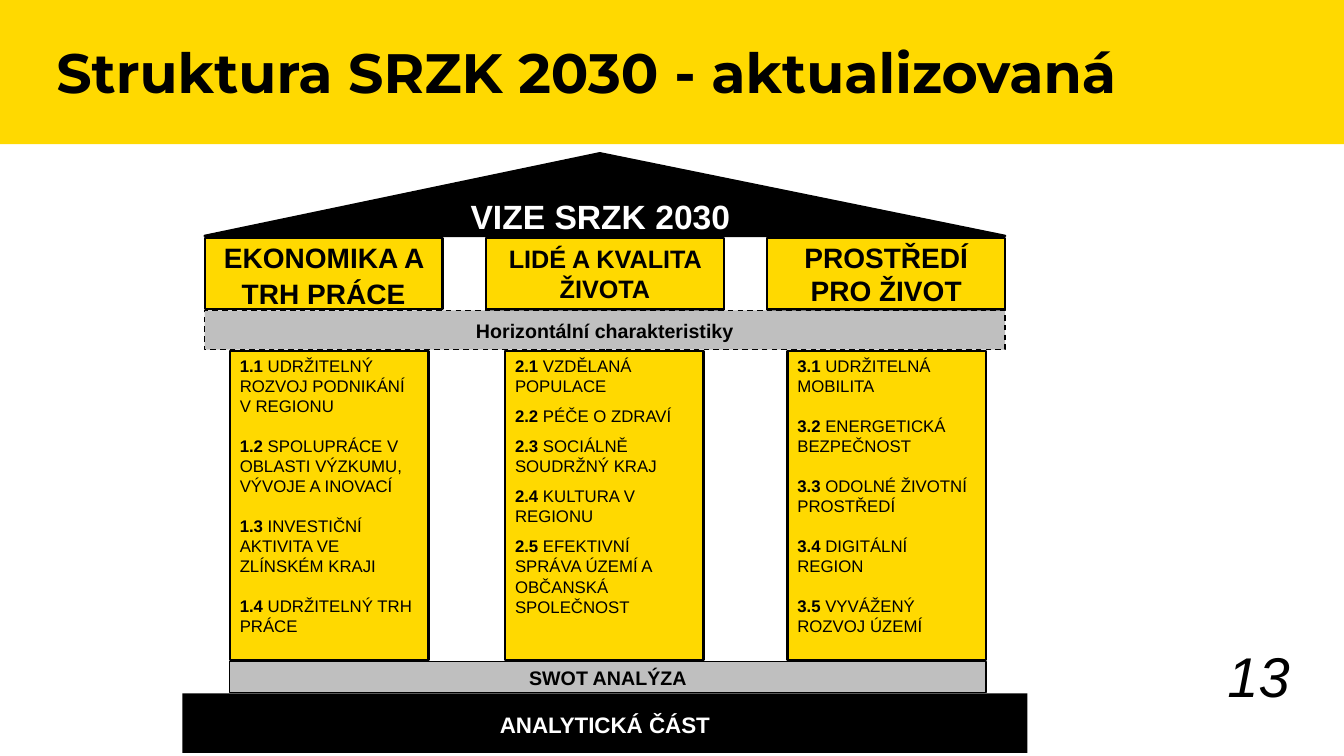
"""Build the temple diagram of the SRZK 2030 strategy structure."""
from dataclasses import dataclass
from typing import Optional

import pptx
import pptx.dml.color
import pptx.enum.dml
import pptx.enum.shapes
import pptx.enum.text
import pptx.util

Inches = pptx.util.Inches
Pt = pptx.util.Pt
Align = pptx.enum.text.PP_ALIGN
Anchor = pptx.enum.text.MSO_ANCHOR


@dataclass(frozen=True)
class Theme:
    yellow: str = "FFD900"
    black: str = "000000"
    white: str = "FFFFFF"
    grey: str = "BFBFBF"
    body_font: str = "Arial"
    title_font: str = "Montserrat"
    title: float = 39.6
    number: float = 40
    vision: float = 24
    head: float = 20
    small_head: float = 18
    base: float = 16
    band: float = 14
    goal: float = 12


THEME = Theme()


@dataclass(frozen=True)
class Label:
    text: str
    size: float
    color: str = THEME.black
    font: str = THEME.body_font
    align: Align = Align.CENTER
    anchor: Anchor = Anchor.MIDDLE
    bold: bool = True
    italic: bool = False
    line_spacing: float = 1.07
    space_after: float = 2
    inset: bool = False


@dataclass(frozen=True)
class Block:
    left: float
    top: float
    width: float
    height: float
    fill: Optional[str] = None
    line_width: float = 0
    dashed: bool = False
    label: Optional[Label] = None


@dataclass(frozen=True)
class Pillar:
    head: Label
    head_line: float
    left: float
    gap: float
    goals: tuple[str, ...]


HEAD_LEFT, HEAD_STEP = 2.03, 2.79

BLOCKS = (
    Block(0, 0, 13.33, 1.43, THEME.yellow),
    Block(9.89, 6.51, 3, 0.57, label=Label(
        "13", THEME.number, align=Align.RIGHT, anchor=Anchor.BOTTOM, bold=False,
        italic=True, line_spacing=1, space_after=0, inset=True)),
    Block(0.46, 0.4, 12.32, 1.02, label=Label(
        "Struktura SRZK 2030 - aktualizovaná", THEME.title, font=THEME.title_font,
        align=Align.LEFT, anchor=Anchor.TOP, line_spacing=0.9, space_after=0, inset=True)),
    Block(4.14, 1.92, 3.63, 0.47, label=Label(
        "VIZE SRZK 2030", THEME.vision, THEME.white, anchor=Anchor.TOP)),
    Block(2.03, 3.08, 7.94, 0.39, THEME.grey, 1, True,
          Label("Horizontální charakteristiky", THEME.band)),
    Block(1.81, 6.88, 8.38, 0.59, THEME.black,
          label=Label("ANALYTICKÁ ČÁST", THEME.base, THEME.white)),
    Block(2.28, 6.56, 7.5, 0.31, THEME.grey, 0.75, label=Label("SWOT ANALÝZA", THEME.band)),
)

PILLARS = (
    Pillar(Label("EKONOMIKA A TRH PRÁCE", THEME.head), 1.5, 2.28, 14, (
        "1.1 UDRŽITELNÝ ROZVOJ PODNIKÁNÍ V REGIONU",
        "1.2 SPOLUPRÁCE V OBLASTI VÝZKUMU, VÝVOJE A INOVACÍ",
        "1.3 INVESTIČNÍ AKTIVITA VE ZLÍNSKÉM KRAJI",
        "1.4 UDRŽITELNÝ TRH PRÁCE")),
    Pillar(Label("LIDÉ A KVALITA ŽIVOTA", THEME.small_head, line_spacing=1,
                 space_after=0, inset=True), 1.7, 5.01, 7, (
        "2.1 VZDĚLANÁ POPULACE",
        "2.2 PÉČE O ZDRAVÍ",
        "2.3 SOCIÁLNĚ SOUDRŽNÝ KRAJ",
        "2.4 KULTURA V REGIONU",
        "2.5 EFEKTIVNÍ SPRÁVA ÚZEMÍ A OBČANSKÁ SPOLEČNOST")),
    Pillar(Label("PROSTŘEDÍ PRO ŽIVOT", THEME.head, line_spacing=1,
                 space_after=0, inset=True), 1.7, 7.81, 14, (
        "3.1 UDRŽITELNÁ MOBILITA",
        "3.2 ENERGETICKÁ BEZPEČNOST",
        "3.3 ODOLNÉ ŽIVOTNÍ PROSTŘEDÍ",
        "3.4 DIGITÁLNÍ REGION",
        "3.5 VYVÁŽENÝ ROZVOJ ÚZEMÍ")),
)


def rgb(color: str) -> pptx.dml.color.RGBColor:
    """Turn a hex string into a colour."""
    return pptx.dml.color.RGBColor.from_string(color)


def paint(shape, fill: str, line_width: float, dashed: bool = False) -> None:
    """Set the fill and outline of a shape."""
    shape.shadow.inherit = False
    shape.fill.solid()
    shape.fill.fore_color.rgb = rgb(fill)
    if not line_width:
        shape.line.fill.background()
        return
    shape.line.color.rgb = rgb(THEME.black)
    shape.line.width = Pt(line_width)
    if dashed:
        shape.line.dash_style = pptx.enum.dml.MSO_LINE.DASH


def style_run(run, label: Label, bold: bool) -> None:
    """Apply the font of a label to one run."""
    run.font.name = label.font
    run.font.size = Pt(label.size)
    run.font.color.rgb = rgb(label.color)
    run.font.bold = bold
    run.font.italic = label.italic


def write_label(frame, label: Label) -> None:
    """Fill a text frame with a one-paragraph label."""
    frame.word_wrap = True
    frame.vertical_anchor = label.anchor
    if not label.inset:
        frame.margin_left = frame.margin_right = 0
        frame.margin_top = frame.margin_bottom = 0
    frame.text = label.text
    paragraph = frame.paragraphs[0]
    paragraph.alignment = label.align
    paragraph.line_spacing = label.line_spacing
    paragraph.space_after = Pt(label.space_after)
    style_run(paragraph.runs[0], label, label.bold)


def draw_block(slide, block: Block):
    """Draw a filled rectangle or a plain text box."""
    place = [Inches(value) for value in (block.left, block.top, block.width, block.height)]
    if block.fill:
        shape = slide.shapes.add_shape(pptx.enum.shapes.MSO_SHAPE.RECTANGLE, *place)
        paint(shape, block.fill, block.line_width, block.dashed)
    else:
        shape = slide.shapes.add_textbox(*place)
    if block.label:
        write_label(shape.text_frame, block.label)
    return shape


def draw_roof(slide) -> None:
    """Draw the black triangular roof."""
    builder = slide.shapes.build_freeform(Inches(2.03), Inches(2.34))
    builder.add_line_segments(
        [(Inches(5.95), Inches(1.52)), (Inches(9.97), Inches(2.34))], close=True)
    paint(builder.convert_to_shape(), THEME.black, 1.7)


def draw_pillar(slide, pillar: Pillar, index: int) -> None:
    """Draw a pillar with its head and numbered goals."""
    draw_block(slide, Block(HEAD_LEFT + index * HEAD_STEP, 2.36, 2.36, 0.71,
                            THEME.yellow, pillar.head_line, label=pillar.head))
    column = draw_block(slide, Block(pillar.left, 3.48, 1.97, 3.07, THEME.yellow, 1.7))
    frame = column.text_frame
    frame.word_wrap = True
    frame.vertical_anchor = Anchor.TOP
    for position, goal in enumerate(pillar.goals):
        paragraph = frame.add_paragraph() if position else frame.paragraphs[0]
        number, name = goal.split(" ", 1)
        paragraph.text = number
        paragraph.add_run().text = f" {name}"
        paragraph.alignment = Align.LEFT
        paragraph.space_before = Pt(pillar.gap if position else 0)
        for run, bold in zip(paragraph.runs, (True, False)):
            style_run(run, Label(goal, THEME.goal), bold)


def main() -> None:
    """Build and save the presentation."""
    presentation = pptx.Presentation()
    presentation.slide_width = Inches(13.33)
    presentation.slide_height = Inches(7.5)
    slide = presentation.slides.add_slide(presentation.slide_layouts[6])
    draw_roof(slide)
    for index, pillar in enumerate(PILLARS):
        draw_pillar(slide, pillar, index)
    for block in BLOCKS:
        draw_block(slide, block)
    presentation.save("out.pptx")


if __name__ == "__main__":
    main()
